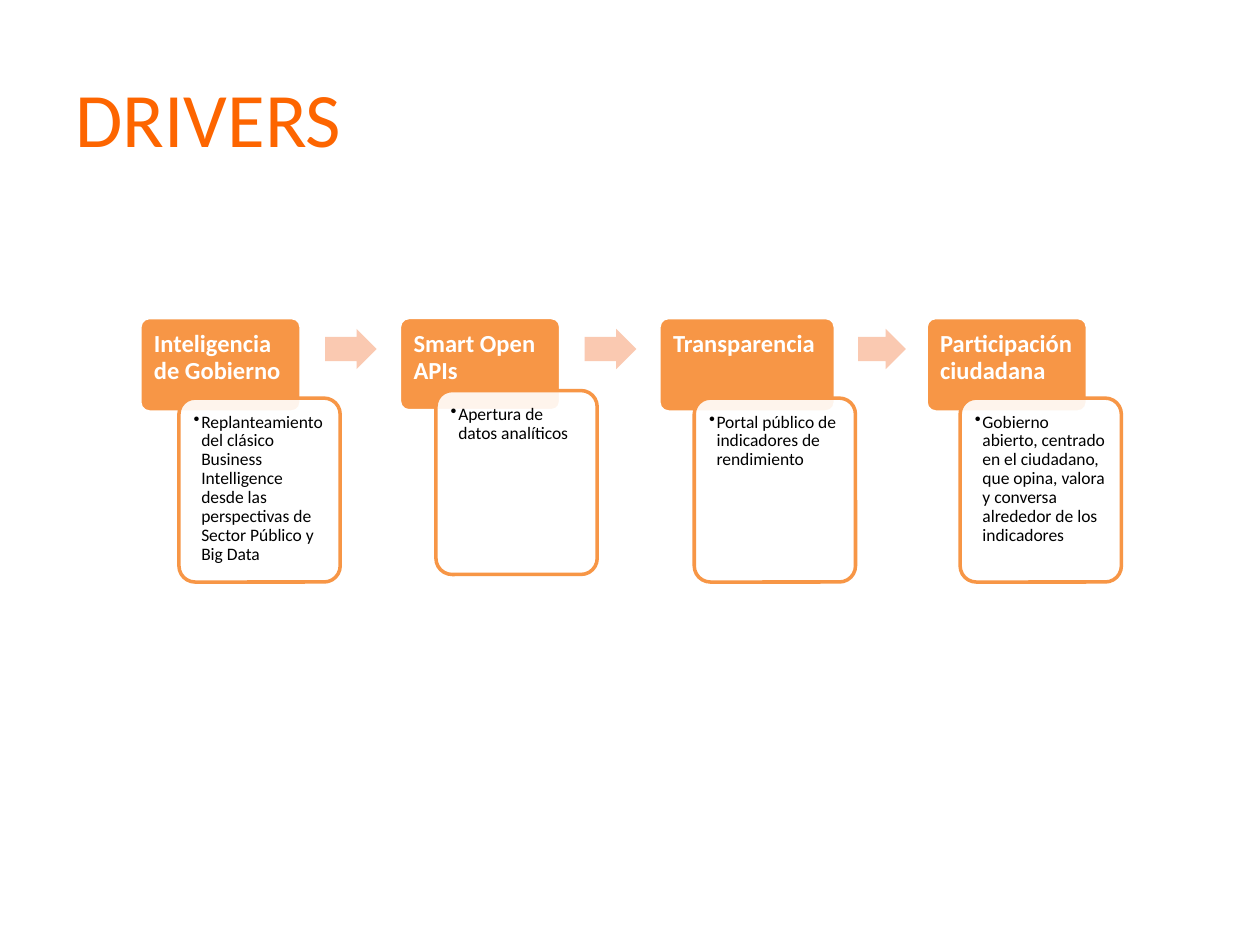
from lxml.etree import SubElement
from pptx import Presentation
from pptx.dml.color import RGBColor
from pptx.enum.shapes import MSO_SHAPE
from pptx.enum.text import MSO_ANCHOR, PP_ALIGN
from pptx.oxml.ns import qn
from pptx.util import Inches, Pt

COLORS = {"title": "FD6500", "accent": "F79646", "arrow": "FAC9B1",
          "white": "FFFFFF", "black": "000000"}
TITLE = "DRIVERS"
# heading, detail, heading left, heading width, card left, card top
DRIVERS = [
    ("Inteligencia de Gobierno",
     "Replanteamiento del clásico Business Intelligence desde las "
     "perspectivas de Sector Público y Big Data", 1.11, 1.28, 1.42, 3.16),
    ("Smart Open APIs", "Apertura de datos analíticos",
     3.17, 1.28, 3.46, 3.10),
    ("Transparencia", "Portal público de indicadores de rendimiento",
     5.23, 1.40, 5.51, 3.16),
    ("Participación ciudadana",
     "Gobierno abierto, centrado en el ciudadano, que opina, valora y "
     "conversa alrededor de los indicadores", 7.35, 1.28, 7.62, 3.16),
]
ARROWS = [(2.58, 0.41), (4.64, 0.41), (6.81, 0.38)]  # left, width
HEADING_TOP, CARD_WIDTH, CARD_HEIGHT = 2.52, 1.28, 1.46
ARROW_TOP, ARROW_HEIGHT = 2.61, 0.32


def color(name):
    return RGBColor.from_string(COLORS[name])


def add_block(slide, preset, box, adjustments, fill, line=None):
    block = slide.shapes.add_shape(preset, *map(Inches, box))
    for index, value in enumerate(adjustments):
        block.adjustments[index] = value
    block.shadow.inherit = False
    block.fill.solid()
    block.fill.fore_color.rgb = color(fill)
    if line:
        block.line.color.rgb = color(line)
        block.line.width = Pt(2)
    else:
        block.line.fill.background()
    return block


def write(shape, text, size, ink, inset, bold=False, bullet=False,
          anchor=MSO_ANCHOR.TOP, spacing=0.9):
    frame = shape.text_frame
    frame.word_wrap = True
    frame.vertical_anchor = anchor
    frame.margin_left = frame.margin_right = Inches(inset)
    frame.margin_top = frame.margin_bottom = Inches(min(inset, 0.09))
    paragraph = frame.paragraphs[0]
    paragraph.text = text
    paragraph.alignment = PP_ALIGN.LEFT
    paragraph.line_spacing = spacing
    if bullet:
        properties = paragraph._p.get_or_add_pPr()
        properties.set("marL", str(Inches(0.06)))
        properties.set("indent", str(-Inches(0.06)))
        SubElement(properties, qn("a:buChar"), char="•")
    font = paragraph.font
    font.name, font.size, font.bold = "Calibri", Pt(size), bold
    font.color.rgb = color(ink)


def add_driver(slide, heading, detail, left, width, card_left, card_top):
    height = 0.75 if card_top > 3.1 else 0.74
    header = add_block(slide, MSO_SHAPE.ROUNDED_RECTANGLE,
                       (left, HEADING_TOP, width, height), [0.1],
                       "accent", "white")
    write(header, heading, 14, "white", 0.09, bold=True)
    card = add_block(slide, MSO_SHAPE.ROUNDED_RECTANGLE,
                     (card_left, card_top, CARD_WIDTH, CARD_HEIGHT), [0.1],
                     "white", "accent")
    fill_color = card.fill._xPr.find(qn("a:solidFill"))[0]
    SubElement(fill_color, qn("a:alpha"), val="90000")
    write(card, detail, 10, "black", 0.08, bullet=True)


def main():
    presentation = Presentation()
    presentation.slide_width = Inches(10)
    presentation.slide_height = Inches(7.5)
    slide = presentation.slides.add_slide(presentation.slide_layouts[6])

    title = slide.shapes.add_textbox(*map(Inches, (0.5, 0.3, 9, 1.25)))
    write(title, TITLE, 44, "title", 0.1, anchor=MSO_ANCHOR.MIDDLE, spacing=1.0)

    for driver in DRIVERS:
        add_driver(slide, *driver)
    for left, width in ARROWS:
        add_block(slide, MSO_SHAPE.RIGHT_ARROW,
                  (left, ARROW_TOP, width, ARROW_HEIGHT), [0.6, 0.5], "arrow")
    presentation.save("out.pptx")


if __name__ == "__main__":
    main()
